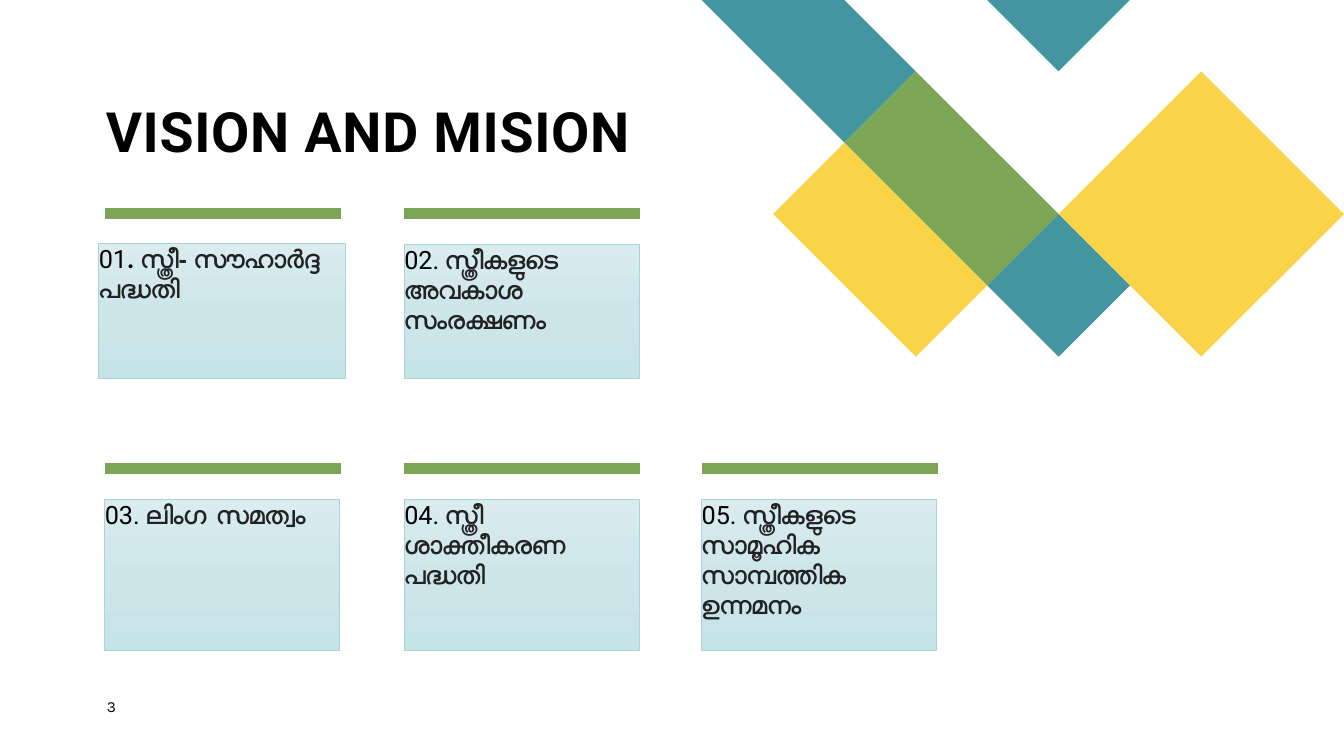
from copy import deepcopy
from dataclasses import dataclass

from pptx import Presentation
from pptx.dml.color import RGBColor
from pptx.enum.shapes import MSO_CONNECTOR, MSO_SHAPE
from pptx.enum.text import MSO_ANCHOR, MSO_AUTO_SIZE, PP_ALIGN
from pptx.oxml.ns import qn
from pptx.util import Inches, Pt

STRAIGHT = MSO_CONNECTOR.STRAIGHT
RECTANGLE = MSO_SHAPE.RECTANGLE
TOP, BOTTOM = MSO_ANCHOR.TOP, MSO_ANCHOR.BOTTOM
LEFT = PP_ALIGN.LEFT
NO_AUTOFIT = MSO_AUTO_SIZE.NONE


@dataclass(frozen=True)
class Theme:
    teal: str = "4495A2"
    yellow: str = "F9D448"
    green: str = "7CA655"
    black: str = "000000"
    card_text: str = "222222"
    card_line: str = "A9D4DB"
    card_stops: tuple = ((0, "DAECEF"), (0.5, "CDE6EA"), (1, "C6E3E8"))
    latin_font: str = "Roboto"
    malayalam_font: str = "Arial"
    number_font: str = "Karla"
    title_size: float = 39.6
    card_size: int = 18
    number_size: int = 11
    bar_width: int = 8


THEME = Theme()
TITLE = "VISION AND MISION"
PAGE_NUMBER = "3"

# Number, whether its dot is bold, text, column, row, box (left, top, width, height)
CARDS = [
    ("01", True, "സ്ത്രീ- സൗഹാർദ്ദ പദ്ധതി", 0, 0, (0.98, 2.41, 2.45, 1.34)),
    ("02", False, "സ്ത്രീകളുടെ അവകാശ സംരക്ഷണം", 1, 0, (4.01, 2.42, 2.33, 1.33)),
    ("03", False, "ലിംഗ സമത്വം", 0, 1, (1.04, 4.95, 2.33, 1.5)),
    ("04", False, "സ്ത്രീ ശാക്തീകരണ പദ്ധതി", 1, 1, (4.01, 4.95, 2.33, 1.5)),
    ("05", False, "സ്ത്രീകളുടെ സാമൂഹിക സാമ്പത്തിക ഉന്നമനം", 2, 1, (6.96, 4.95, 2.33, 1.5)),
]
BAR_LEFTS = (1.04, 4.01, 6.96)
BAR_TOPS = (2.12, 4.65)
BAR_LENGTH = 2.34

# Corners count half-diamonds right and down from the pattern's top left
PATTERN = [
    (THEME.teal, [[(3, 1), (2, 0), (0, 0), (2, 2)], [(6, 4), (5, 3), (4, 4), (5, 5)]]),
    (THEME.yellow, [[(2, 2), (1, 3), (3, 5), (4, 4)]]),
    (THEME.teal, [[(6, 0), (4, 0), (5, 1)]]),
    (THEME.green, [[(3, 1), (2, 2), (4, 4), (5, 3)]]),
    (THEME.yellow, [[(9, 3), (7, 1), (5, 3), (7, 5)]]),
]
SLIDE_WIDTH, SLIDE_HEIGHT = 13.33, 7.5
PATTERN_LEFT = 6.96
PATTERN_UNIT = (SLIDE_WIDTH - PATTERN_LEFT) / 9


def color(value):
    return RGBColor.from_string(value)


def box(*lengths):
    return [Inches(length) for length in lengths]


def prepare_text(shape, anchor=TOP):
    """Remove the margins and return the first paragraph, left aligned."""
    frame = shape.text_frame
    frame.margin_left = frame.margin_right = frame.margin_top = frame.margin_bottom = 0
    frame.word_wrap = True
    frame.auto_size = NO_AUTOFIT
    frame.vertical_anchor = anchor
    paragraph = frame.paragraphs[0]
    paragraph.alignment = LEFT
    return paragraph


def add_run(paragraph, text, font_name, size, fill, bold=False):
    run = paragraph.add_run()
    run.text = text
    font = run.font
    font.name, font.size, font.bold = font_name, Pt(size), bold
    font.color.rgb = color(fill)
    return run


def add_pattern_piece(slide, fill, contours):
    points = [[box(PATTERN_LEFT + x * PATTERN_UNIT, y * PATTERN_UNIT) for x, y in contour]
              for contour in contours]
    builder = slide.shapes.build_freeform(*points[0][0])
    builder.add_line_segments(points[0][1:], close=True)
    for contour in points[1:]:
        builder.move_to(*contour[0])
        builder.add_line_segments(contour[1:], close=True)
    shape = builder.convert_to_shape()
    shape.shadow.inherit = False
    shape.fill.solid()
    shape.fill.fore_color.rgb = color(fill)
    shape.line.fill.background()


def add_bar(slide, left, top):
    bar = slide.shapes.add_connector(STRAIGHT, *box(left, top, left + BAR_LENGTH, top))
    bar.line.color.rgb = color(THEME.green)
    bar.line.width = Pt(THEME.bar_width)
    properties = bar._element.spPr
    properties.append(properties.makeelement(qn("a:effectLst"), {}))


def fill_card(shape):
    """Apply a three-stop gradient that runs from top to bottom."""
    shape.fill.gradient()
    shape.fill.gradient_angle = 270
    stop_list = shape._element.spPr.find(".//" + qn("a:gsLst"))
    stop_list.insert(1, deepcopy(stop_list[0]))
    for stop, (position, value) in zip(shape.fill.gradient_stops, THEME.card_stops):
        stop.position = position
        stop.color.rgb = color(value)


def add_card(slide, number, bold_dot, text, bounds):
    card = slide.shapes.add_shape(RECTANGLE, *box(*bounds))
    card.shadow.inherit = False
    fill_card(card)
    card.line.color.rgb = color(THEME.card_line)
    card.line.width = Pt(0.5)
    paragraph = prepare_text(card)
    add_run(paragraph, number, THEME.latin_font, THEME.card_size, THEME.black)
    add_run(paragraph, ". ", THEME.latin_font, THEME.card_size, THEME.black, bold_dot)
    add_run(paragraph, text, THEME.malayalam_font, THEME.card_size, THEME.card_text, True)


def add_title(slide):
    title = slide.shapes.title
    title.left, title.top, title.width, title.height = box(1.05, 0.96, 5.4, 0.67)
    paragraph = prepare_text(title, BOTTOM)
    paragraph.line_spacing = 0.9
    run = add_run(paragraph, TITLE, THEME.latin_font, THEME.title_size, THEME.black, True)
    run.font._element.set("spc", "50")


def add_page_number(slide):
    paragraph = prepare_text(slide.shapes.add_textbox(*box(1.06, 6.92, 0.57, 0.27)))
    add_run(paragraph, PAGE_NUMBER, THEME.number_font, THEME.number_size, THEME.black)


def main():
    presentation = Presentation()
    presentation.slide_width, presentation.slide_height = box(SLIDE_WIDTH, SLIDE_HEIGHT)
    slide = presentation.slides.add_slide(presentation.slide_layouts[5])
    for fill, contours in PATTERN:
        add_pattern_piece(slide, fill, contours)
    add_title(slide)
    for number, bold_dot, text, column, row, bounds in CARDS:
        add_bar(slide, BAR_LEFTS[column], BAR_TOPS[row])
        add_card(slide, number, bold_dot, text, bounds)
    add_page_number(slide)
    presentation.save("out.pptx")


if __name__ == "__main__":
    main()
